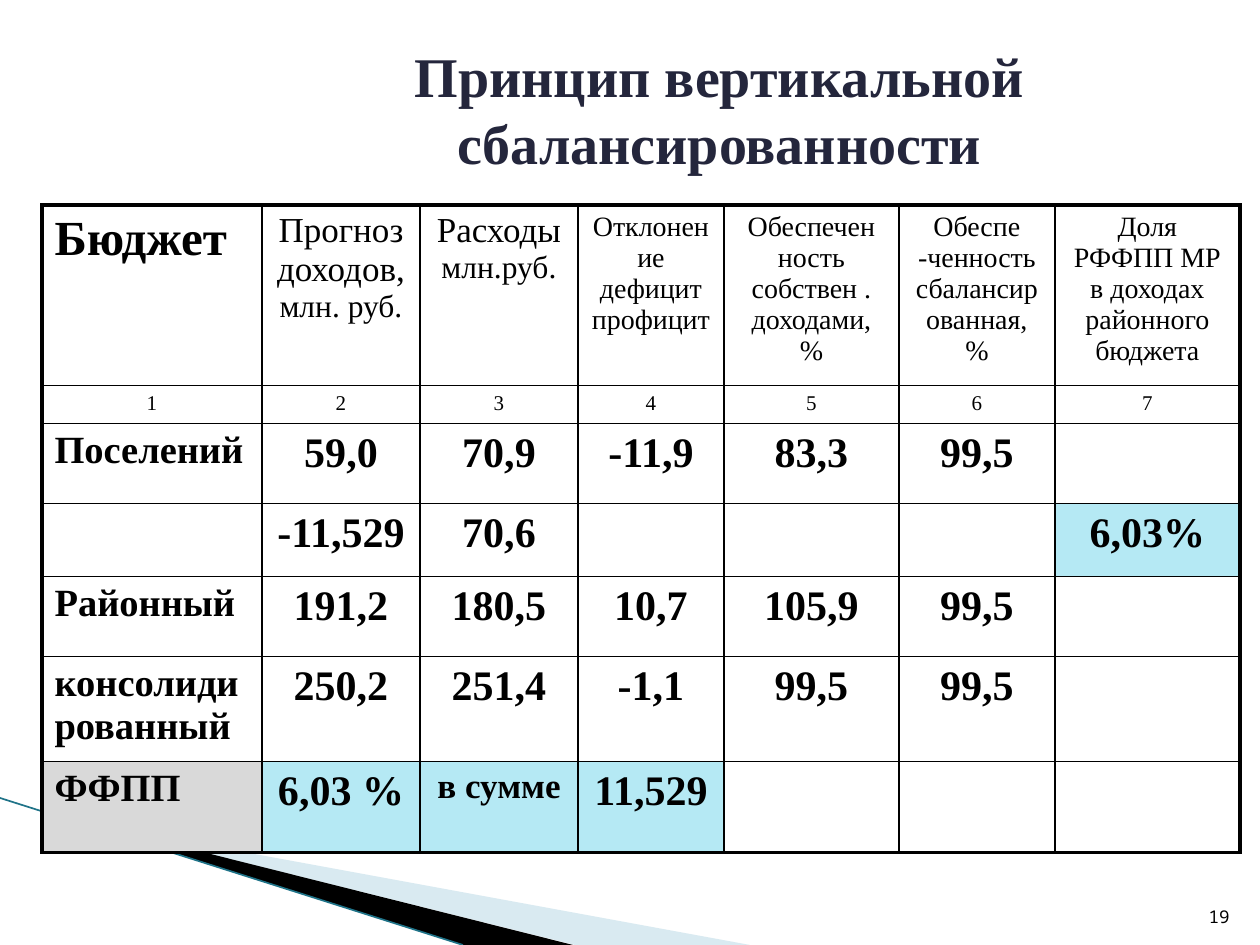
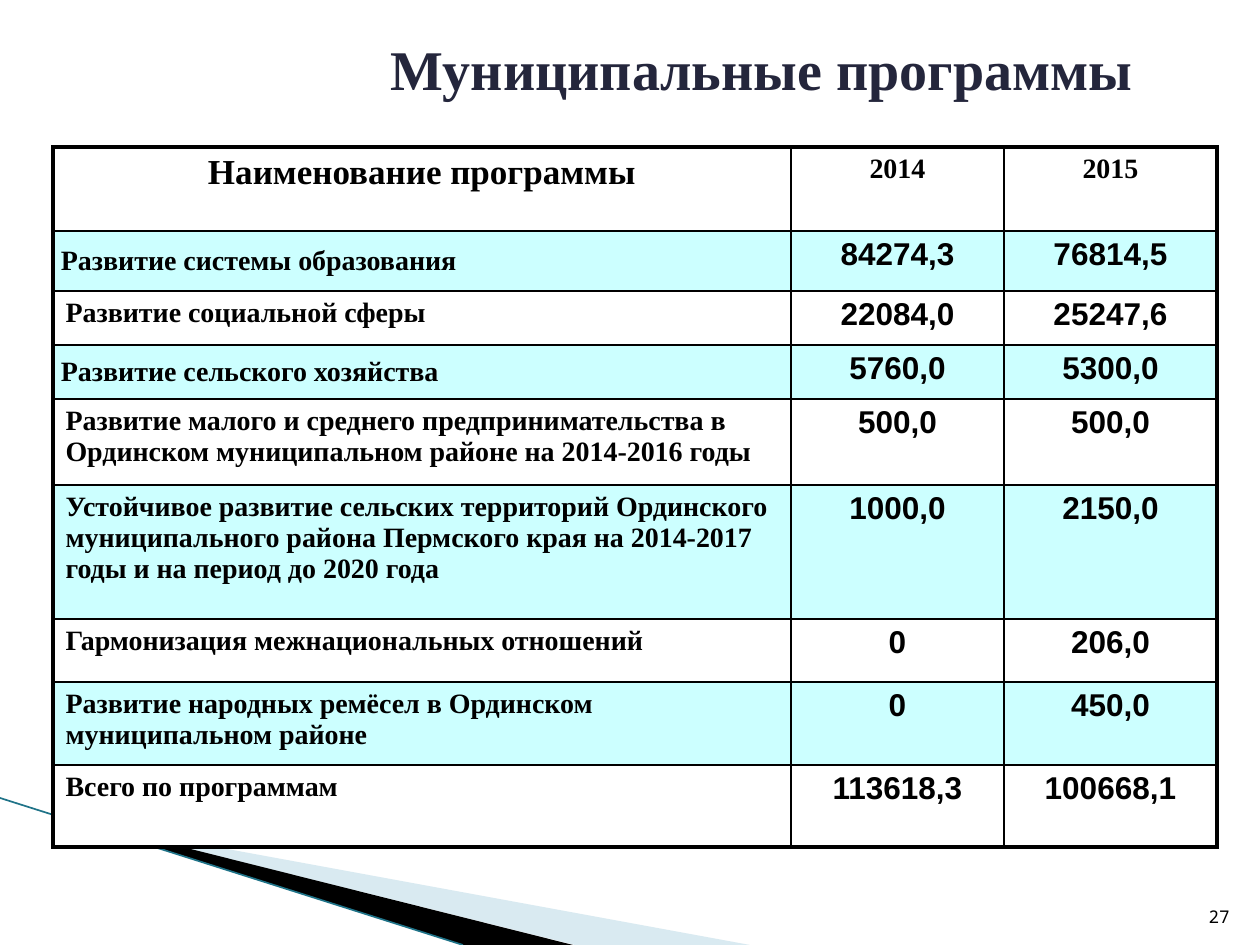
from lxml import etree
from pptx import Presentation
from pptx.dml.color import RGBColor
from pptx.enum.shapes import MSO_CONNECTOR
from pptx.enum.text import MSO_ANCHOR, MSO_AUTO_SIZE, PP_ALIGN
from pptx.oxml.ns import qn
from pptx.util import Emu, Pt

LEFT, CENTER, RIGHT = PP_ALIGN.LEFT, PP_ALIGN.CENTER, PP_ALIGN.RIGHT
TOP, MIDDLE, BOTTOM = MSO_ANCHOR.TOP, MSO_ANCHOR.MIDDLE, MSO_ANCHOR.BOTTOM
NO_AUTOFIT = MSO_AUTO_SIZE.NONE
STRAIGHT = MSO_CONNECTOR.STRAIGHT

SCALE = 914400 / 126
SLIDE_W, SLIDE_H = 1260, 945
TITLE_ONLY = 5
SERIF, SANS, MONO = "Times New Roman", "Arial", "Noto Sans Mono"
OUTER, INNER = 2.25, 1
COLORS = {
    "white": "FFFFFF",
    "ink": "000000",
    "title": "24263C",
    "wave": "A0CBDC",
    "edge": "1F7388",
    "aqua": "B5E9F4",
    "grey": "D9D9D9",
    "cyan": "CCFFFF",
}

BUDGET_ROWS = [
    ["Бюджет", "Прогноз доходов,\vмлн. руб.", "Расходы\vмлн.руб.",
     "Отклонение дефицит профицит", "Обеспечен ность собствен . доходами, %",
     "Обеспе -ченность сбалансированная, %",
     "Доля РФФПП МР в доходах районного бюджета"],
    ["1", "2", "3", "4", "5", "6", "7"],
    ["Поселений", "59,0", "70,9", "-11,9", "83,3", "99,5", ""],
    ["", "-11,529", "70,6", "", "", "", "6,03%"],
    ["Районный", "191,2", "180,5", "10,7", "105,9", "99,5", ""],
    ["консолидированный", "250,2", "251,4", "-1,1", "99,5", "99,5", ""],
    ["ФФПП", "6,03 %", "в сумме", "11,529", "", "", ""],
]
BUDGET_FILLS = {(3, 6): "aqua", (6, 0): "grey", (6, 1): "aqua",
                (6, 2): "aqua", (6, 3): "aqua"}

PROGRAM_ROWS = [
    ["Наименование программы", "2014", "2015"],
    ["Развитие системы образования", "84274,3", "76814,5"],
    ["Развитие социальной сферы", "22084,0", "25247,6"],
    ["Развитие сельского хозяйства", "5760,0", "5300,0"],
    ["Развитие малого и среднего предпринимательства в Ординском "
     "муниципальном районе на 2014-2016 годы", "500,0", "500,0"],
    ["Устойчивое развитие сельских территорий Ординского муниципального "
     "района Пермского края на 2014-2017 годы и на период до 2020 года",
     "1000,0", "2150,0"],
    ["Гармонизация межнациональных отношений", "0", "206,0"],
    ["Развитие народных ремёсел в Ординском муниципальном районе", "0", "450,0"],
    ["Всего по программам", "113618,3", "100668,1"],
]
CENTERED_PROGRAMS = (1, 3)


def px(length):
    return Emu(round(length * SCALE))


def rgb(name):
    return RGBColor.from_string(COLORS[name])


def style_font(font, size, family=SERIF, color="ink", bold=False):
    font.size = Pt(size)
    font.name = family
    font.bold = bold
    font.color.rgb = rgb(color)


def place(shape, box):
    shape.left, shape.top, shape.width, shape.height = map(px, box)


def add_wedge(slide, points, color, opacity=100):
    builder = slide.shapes.build_freeform(*points[0], scale=SCALE)
    builder.add_line_segments(points[1:])
    wedge = builder.convert_to_shape()
    wedge.shadow.inherit = False
    wedge.fill.solid()
    wedge.fill.fore_color.rgb = rgb(color)
    wedge.line.fill.background()
    if opacity < 100:
        tint = wedge.fill._xPr.find(qn("a:solidFill"))[0]
        etree.SubElement(tint, qn("a:alpha"), val=str(opacity * 1000))


def add_corner_wave(slide, box):
    left, top, width, height = box
    bottom = top + height
    add_wedge(slide, [(left + 69, top + 22), (left + width, bottom),
                      (left + 575, bottom), (left + 69, top + 21)], "wave", 40)
    add_wedge(slide, [(left + 67, top + 20), (left + 573, bottom),
                      (left + 463, bottom), (left + 68, top + 21)], "ink")
    edge = slide.shapes.add_connector(
        STRAIGHT, px(left), px(top), px(left + 463), px(bottom))
    edge.line.color.rgb = rgb("edge")
    edge.line.width = Pt(0.95)
    etree.SubElement(edge._element.spPr, qn("a:effectLst"))


def add_title(slide, box, text, align):
    title = slide.shapes.title
    place(title, box)
    title.fill.solid()
    title.fill.fore_color.rgb = rgb("white")
    frame = title.text_frame
    frame.text = text
    frame.auto_size = NO_AUTOFIT
    frame.vertical_anchor = MIDDLE
    paragraph = frame.paragraphs[0]
    paragraph.alignment = align
    style_font(paragraph.runs[0].font, 32, color="title", bold=True)


def add_page_number(slide, box, number):
    page = slide.shapes.add_textbox(*map(px, box))
    frame = page.text_frame
    frame.word_wrap = True
    frame.vertical_anchor = BOTTOM
    frame.text = number
    paragraph = frame.paragraphs[0]
    paragraph.alignment = RIGHT
    style_font(paragraph.runs[0].font, 10, MONO)


def start_slide(deck, title, title_box, title_align, number):
    slide = deck.slides.add_slide(deck.slide_layouts[TITLE_ONLY])
    add_corner_wave(slide, (0, 798, 750, 147))
    add_title(slide, title_box, title, title_align)
    add_page_number(slide, (1192, 883, 50, 50), number)
    return slide


def set_borders(cell, widths):
    properties = cell._tc.get_or_add_tcPr()
    for side, width in zip("LRTB", widths):
        border = etree.SubElement(properties, qn(f"a:ln{side}"), w=str(Pt(width)))
        paint = etree.SubElement(border, qn("a:solidFill"))
        etree.SubElement(paint, qn("a:srgbClr"), val=COLORS["ink"])


def add_grid(slide, corner, widths, heights, rows, fill_of):
    frame = slide.shapes.add_table(
        len(heights), len(widths), *map(px, (*corner, sum(widths), sum(heights))))
    table = frame.table
    table.first_row = table.horz_banding = False
    for column, width in zip(table.columns, widths):
        column.width = px(width)
    for row, height in zip(table.rows, heights):
        row.height = px(height)
    last_row, last_column = len(heights) - 1, len(widths) - 1
    for r, texts in enumerate(rows):
        for c, text in enumerate(texts):
            cell = table.cell(r, c)
            on_rim = (c == 0, c == last_column, r == 0, r == last_row)
            set_borders(cell, [OUTER if rim else INNER for rim in on_rim])
            cell.fill.solid()
            cell.fill.fore_color.rgb = rgb(fill_of(r, c))
            cell.text_frame.text = ""
            cell.text_frame.paragraphs[0].text = text
    return table


def style_cell(cell, sizes, align, family=SERIF, bold=True, anchor=TOP):
    cell.vertical_anchor = anchor
    paragraph = cell.text_frame.paragraphs[0]
    paragraph.alignment = align
    for run, size in zip(paragraph.runs, sizes):
        style_font(run.font, size, family, bold=bold)


def budget_sizes(r, c):
    if r == 0:
        return (28,) if c == 0 else (20, 18) if c < 3 else (16,)
    if r == 1:
        return (12,)
    if (r, c) == (6, 2):
        return (20,)
    return (22,) if c == 0 else (24,)


def add_budget_table(slide, corner):
    widths = [220, 158, 158, 146, 175, 156, 185]
    heights = [179, 36, 80, 73, 80, 102, 91]
    table = add_grid(slide, corner, widths, heights, BUDGET_ROWS,
                     lambda r, c: BUDGET_FILLS.get((r, c), "white"))
    for r in range(len(heights)):
        for c in range(len(widths)):
            align = LEFT if c == 0 and r != 1 else CENTER
            bold = r > 1 or (r, c) == (0, 0)
            style_cell(table.cell(r, c), budget_sizes(r, c), align, bold=bold)


def add_program_table(slide, corner):
    widths = [738, 213, 213]
    heights = [84, 60, 54, 54, 86, 134, 63, 83, 82]
    table = add_grid(slide, corner, widths, heights, PROGRAM_ROWS,
                     lambda r, c: "cyan" if r in (1, 3, 5, 7) else "white")
    for r in range(len(heights)):
        for c in range(len(widths)):
            cell = table.cell(r, c)
            if r == 0:
                style_cell(cell, (16,) if c else (20,), CENTER)
            elif c:
                style_cell(cell, (18,), CENTER, SANS)
            elif r in CENTERED_PROGRAMS:
                style_cell(cell, (16,), LEFT, anchor=MIDDLE)
                cell.margin_left = px(8)
                cell.margin_top = cell.margin_right = px(1)
                cell.margin_bottom = 0
            else:
                style_cell(cell, (16,), LEFT)


def main():
    deck = Presentation()
    deck.slide_width, deck.slide_height = px(SLIDE_W), px(SLIDE_H)
    balance = start_slide(deck, "Принцип вертикальной сбалансированности",
                          (242, 38, 955, 141), CENTER, "19")
    add_budget_table(balance, (42, 205))
    programs = start_slide(deck, "Муниципальные программы",
                           (378, 21, 829, 95), LEFT, "27")
    add_program_table(programs, (53, 147))
    deck.save("out.pptx")


if __name__ == "__main__":
    main()
